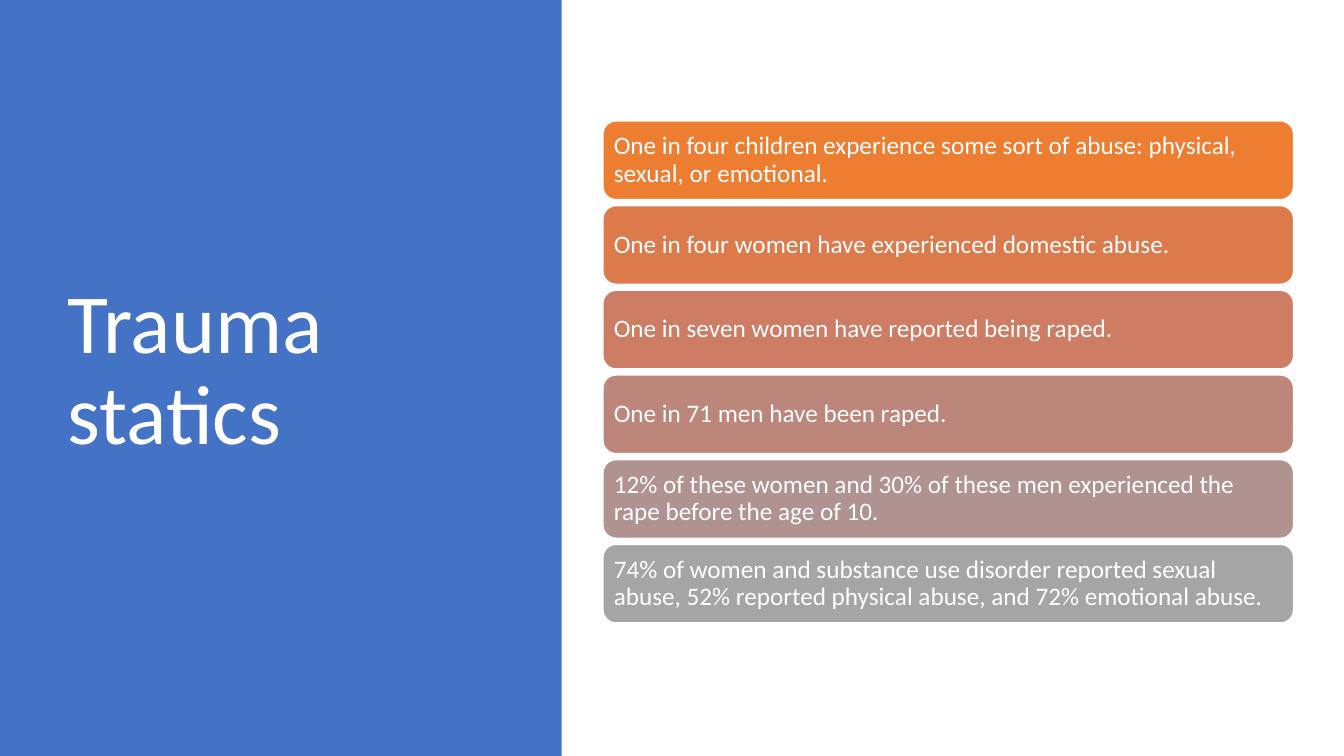
import pptx
import pptx.util
import pptx.dml.color
import pptx.enum.shapes
import pptx.enum.text

WIDTH, HEIGHT = 13.33, 7.5
PANEL_WIDTH = 5.57
CARD_LEFT, CARD_TOP = 5.98, 1.2
CARD_WIDTH, CARD_HEIGHT = 6.85, 0.78
CARD_PITCH = 0.84
WHITE = "FFFFFF"
SHAPE = pptx.enum.shapes.MSO_SHAPE

STATISTICS = [
    ("ED7D31", "One in four children experience some sort of abuse: physical, sexual, or emotional."),
    ("DC7A4B", "One in four women have experienced domestic abuse."),
    ("CC7D64", "One in seven women have reported being raped."),
    ("BD867B", "One in 71 men have been raped."),
    ("B09391", "12% of these women and 30% of these men experienced the rape before the age of 10."),
    ("A5A5A5", "74% of women and substance use disorder reported sexual abuse, "
               "52% reported physical abuse, and 72% emotional abuse."),
]


def rgb(color):
    return pptx.dml.color.RGBColor.from_string(color)


def inches(*lengths):
    return [pptx.util.Inches(length) for length in lengths]


def add_block(s, kind, box, fill, line=None):
    sp = s.shapes.add_shape(kind, *inches(*box))
    sp.shadow.inherit = False
    sp.fill.solid()
    sp.fill.fore_color.rgb = rgb(fill)
    if line:
        sp.line.color.rgb = rgb(line)
        sp.line.width = pptx.util.Pt(1)
    else:
        sp.line.fill.background()
    return sp


def write(sp, text, size):
    """Set white, left-aligned, vertically centred text in a shape."""
    tf = sp.text_frame
    tf.word_wrap = True
    tf.auto_size = pptx.enum.text.MSO_AUTO_SIZE.NONE
    tf.vertical_anchor = pptx.enum.text.MSO_ANCHOR.MIDDLE
    p = tf.paragraphs[0]
    p.alignment = pptx.enum.text.PP_ALIGN.LEFT
    p.line_spacing = 0.9
    r = p.add_run()
    r.text = text
    r.font.name = "Calibri"
    r.font.size = pptx.util.Pt(size)
    r.font.color.rgb = rgb(WHITE)
    return tf


def add_title(s, text):
    title = s.shapes.title
    title.left, title.top, title.width, title.height = inches(0.57, 0.68, 4.16, 6.02)
    write(title, text, 60)
    panel = add_block(s, SHAPE.RECTANGLE, (0, 0, PANEL_WIDTH, HEIGHT), "4472C4")
    title.element.addprevious(panel.element)


def add_card(s, row, fill, text):
    box = (CARD_LEFT, CARD_TOP + row * CARD_PITCH, CARD_WIDTH, CARD_HEIGHT)
    sp = add_block(s, SHAPE.ROUNDED_RECTANGLE, box, fill, WHITE)
    tf = write(sp, text, 18)
    tf.margin_left, tf.margin_top, tf.margin_right, tf.margin_bottom = inches(*[0.07] * 4)


def main():
    prs = pptx.Presentation()
    prs.slide_width, prs.slide_height = inches(WIDTH, HEIGHT)
    s = prs.slides.add_slide(prs.slide_layouts.get_by_name("Title Only"))
    add_title(s, "Trauma statics")
    for row, (fill, text) in enumerate(STATISTICS):
        add_card(s, row, fill, text)
    prs.save("out.pptx")


if __name__ == "__main__":
    main()
